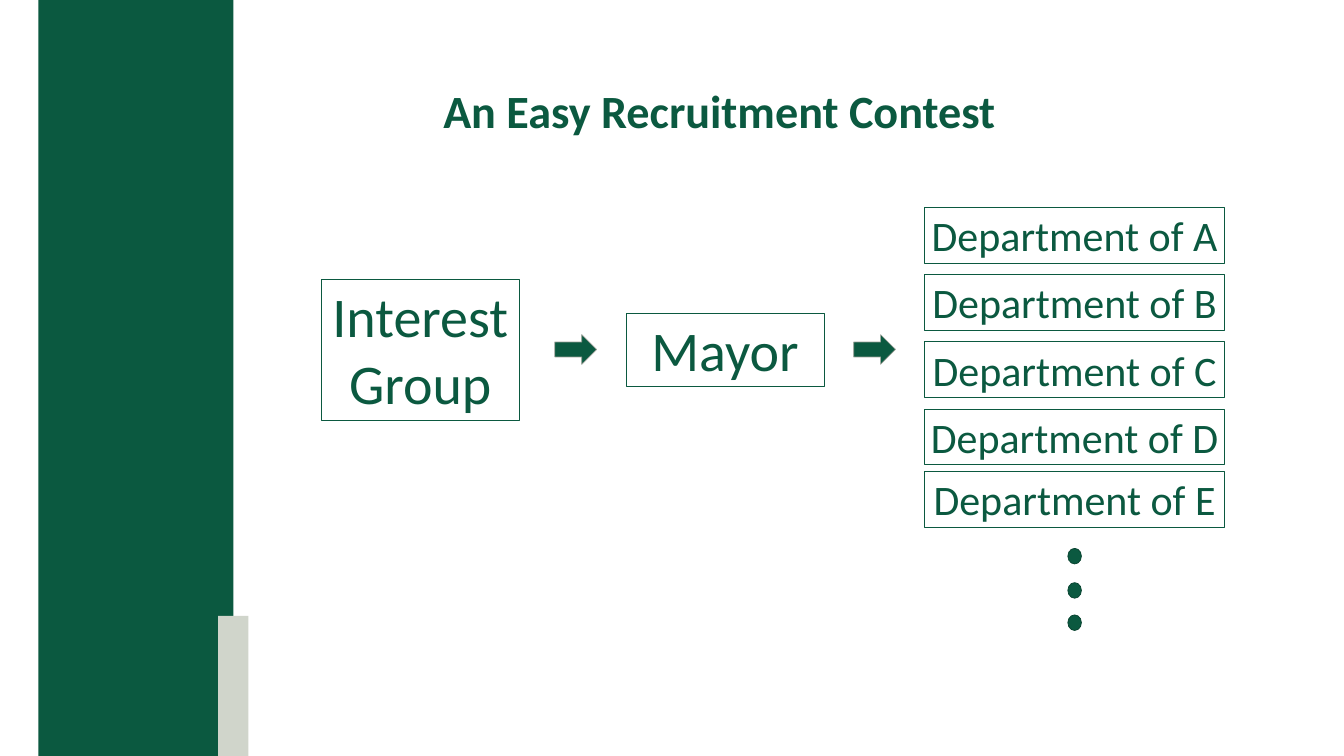
from dataclasses import dataclass

from pptx import Presentation
from pptx.dml.color import RGBColor
from pptx.enum.shapes import MSO_SHAPE
from pptx.enum.text import MSO_ANCHOR, MSO_AUTO_SIZE, PP_ALIGN
from pptx.util import Pt

RECTANGLE = MSO_SHAPE.RECTANGLE
OVAL = MSO_SHAPE.OVAL
RIGHT_ARROW = MSO_SHAPE.RIGHT_ARROW
TOP, MIDDLE = MSO_ANCHOR.TOP, MSO_ANCHOR.MIDDLE
CENTER = PP_ALIGN.CENTER
GROW_TO_TEXT = MSO_AUTO_SIZE.SHAPE_TO_FIT_TEXT


@dataclass(frozen=True)
class Theme:
    font: str = "Calibri"
    green: RGBColor = RGBColor(0x0B, 0x59, 0x40)
    dark_green: RGBColor = RGBColor(0x08, 0x42, 0x2F)
    sage: RGBColor = RGBColor(0xD0, 0xD5, 0xCB)
    gray: RGBColor = RGBColor(0x9A, 0x9E, 0x96)
    title_size: int = 66
    actor_size: int = 80
    department_size: int = 60


theme = Theme()
presentation = Presentation()
presentation.slide_width = Pt(1920.24)
presentation.slide_height = Pt(1080)
slide = presentation.slides.add_slide(presentation.slide_layouts[6])


def add_box(kind, left, top, width, height, fill=None, line=None, line_width=1):
    shape = slide.shapes.add_shape(kind, Pt(left), Pt(top), Pt(width), Pt(height))
    shape.shadow.inherit = False
    if fill is None:
        shape.fill.background()
    else:
        shape.fill.solid()
        shape.fill.fore_color.rgb = fill
    if line is None:
        shape.line.fill.background()
    else:
        shape.line.color.rgb = line
        shape.line.width = Pt(line_width)
    return shape


def write_centered(shape, text, size, bold=False):
    shape.text_frame.word_wrap = True
    paragraph = shape.text_frame.paragraphs[0]
    paragraph.alignment = CENTER
    run = paragraph.add_run()
    run.text = text
    run.font.name = theme.font
    run.font.size = Pt(size)
    run.font.bold = bold
    run.font.color.rgb = theme.green


# Side bands
add_box(RECTANGLE, 54.72, 0, 278.64, 1080, fill=theme.green)
add_box(RECTANGLE, 311.76, 880, 43.2, 200, fill=theme.sage)

# Title
title = slide.shapes.add_textbox(Pt(406), Pt(57.6), Pt(1244), Pt(208.8))
title.text_frame.vertical_anchor = MIDDLE
title.text_frame.paragraphs[0].line_spacing = 0.9
write_centered(title, "An Easy Recruitment Contest", theme.title_size, bold=True)

# Labelled boxes: the two actors, then the column of departments
labels = [
    ("Interest Group", theme.actor_size, 458.64, 398.88, 283.68, 200.88),
    ("Mayor", theme.actor_size, 894.24, 447.12, 283.68, 104.4),
]
department_tops = [296 + 96 * row for row in range(4)] + [673.2]
for letter, top in zip("ABCDE", department_tops):
    labels.append((f"Department of {letter}", theme.department_size, 1321.2, top, 428.4, 80))

for text, size, left, top, width, height in labels:
    box = add_box(RECTANGLE, left, top, width, height, line=theme.green, line_width=0.75)
    box.text_frame.vertical_anchor = TOP
    box.text_frame.auto_size = GROW_TO_TEXT
    write_centered(box, text, size)

# Dots for further departments
for top in (783.36, 832.32, 878.4):
    add_box(OVAL, 1525.68, top, 19.44, 22.32, fill=theme.green, line=theme.dark_green)

# Arrows between the stages
for left in (792.72, 1219.68):
    add_box(RIGHT_ARROW, left, 478, 59.76, 42.48, fill=theme.green, line=theme.gray)

presentation.save("out.pptx")
